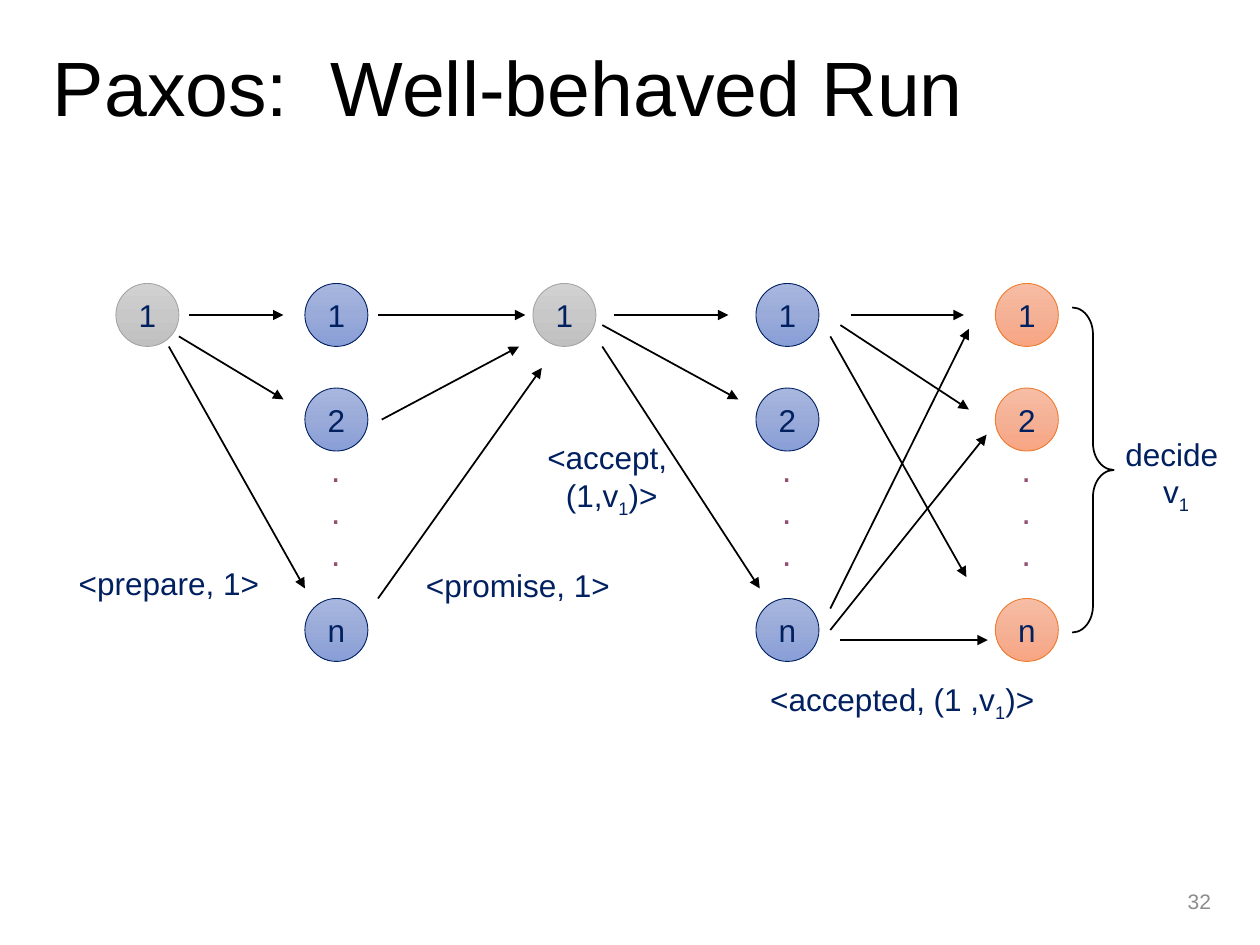
from dataclasses import dataclass

from lxml.etree import SubElement
from pptx import Presentation
from pptx.dml.color import RGBColor
from pptx.enum.shapes import MSO_CONNECTOR as Connector, MSO_SHAPE as Shape
from pptx.enum.text import MSO_ANCHOR as Anchor, MSO_AUTO_SIZE as AutoSize, PP_ALIGN as Align
from pptx.oxml.ns import qn
from pptx.util import Inches, Pt


@dataclass(frozen=True)
class Role:
    line: str
    gradient: tuple


@dataclass(frozen=True)
class Theme:
    font: str = "Arial"
    title_size: int = 44
    label_size: int = 18
    dots_size: int = 20
    number_size: int = 12
    black: str = "000000"
    label: str = "002060"
    dots: str = "954F72"
    number: str = "8C8C8C"
    proposer: Role = Role("A5A5A5", ("D2D2D2", "C8C8C8", "C0C0C0"))
    acceptor: Role = Role("002060", ("A8B7DF", "9AABD9", "889ED7"))
    learner: Role = Role("ED7D31", ("F7BDA5", "F5B196", "F8A582"))


@dataclass(frozen=True)
class Box:
    left: float
    top: float
    width: float
    height: float

    def inner(self, x, y, width, height):
        return Box(self.left + x, self.top + y, width, height)

    def lengths(self):
        return [Inches(v) for v in (self.left, self.top, self.width, self.height)]


THEME = Theme()
NODE = 0.5
NODE_ROWS = {"1": 0, "2": 0.83, "n": 2.5}


def write(shape, *paragraphs, size=THEME.label_size, color=THEME.label,
          align=Align.CENTER, anchor=Anchor.TOP, wrap=False, spacing=None):
    """Each paragraph is a tuple of parts; every second part is a subscript."""
    frame = shape.text_frame
    frame.auto_size = AutoSize.NONE
    frame.word_wrap = wrap
    frame.vertical_anchor = anchor
    for index, parts in enumerate(paragraphs):
        paragraph = frame.add_paragraph() if index else frame.paragraphs[0]
        paragraph.alignment = align
        if spacing:
            paragraph.line_spacing = spacing
        for position, part in enumerate(parts):
            run = paragraph.add_run()
            run.text = part
            run.font.name = THEME.font
            run.font.size = Pt(size)
            run.font.color.rgb = RGBColor.from_string(color)
            if position % 2:
                run.font._element.set("baseline", "-25000")


def label(shapes, box, *paragraphs, **style):
    write(shapes.add_textbox(*box.lengths()), *paragraphs, **style)


def outline(shape, color, width):
    shape.line.color.rgb = RGBColor.from_string(color)
    shape.line.width = Pt(width)


def shade(shape, colors):
    """Fill from top to bottom with evenly spaced colours."""
    shape.fill.gradient()
    shape.fill.gradient_angle = 270
    stops = shape._element.spPr.find(qn("a:gradFill")).find(qn("a:gsLst"))
    for stop in list(stops):
        stops.remove(stop)
    for index, color in enumerate(colors):
        position = index * 100000 // (len(colors) - 1)
        stop = SubElement(stops, qn("a:gs"), pos=str(position))
        SubElement(stop, qn("a:srgbClr"), val=color)


def node(shapes, box, name, role):
    circle = shapes.add_shape(Shape.OVAL, *box.lengths())
    circle.shadow.inherit = False
    shade(circle, role.gradient)
    outline(circle, role.line, 0.5)
    write(circle, (name,), anchor=Anchor.MIDDLE)


def column(shapes, box, role):
    """A lone proposer, or a full column of replicas with dots before n."""
    names = ["1"] if role is THEME.proposer else list(NODE_ROWS)
    for name in names:
        node(shapes, box.inner(0, NODE_ROWS[name], NODE, NODE), name, role)
    if len(names) > 1:
        label(shapes, box.inner(0.08, 1.25, 0.33, 1.1), *[(".",)] * 3,
              size=THEME.dots_size, color=THEME.dots, wrap=True)


def arrow(shapes, box, start, end):
    ends = [Inches(v) for x, y in (start, end) for v in (box.left + x, box.top + y)]
    line = shapes.add_connector(Connector.STRAIGHT, *ends)
    outline(line, THEME.black, 1)
    SubElement(line.line._get_or_add_ln(), qn("a:tailEnd"), type="triangle")
    SubElement(line._element.spPr, qn("a:effectLst"))


def phase(slide, box, messages, columns, caption_box, *caption):
    """One round of messages, the nodes it reaches and its caption."""
    shapes = slide.shapes.add_group_shape().shapes
    for start, end in messages:
        arrow(shapes, box, start, end)
    for x, role in columns:
        column(shapes, box.inner(x, 0, NODE, box.height), role)
    label(shapes, box.inner(*caption_box), *caption)


def decision(slide, box):
    shapes = slide.shapes.add_group_shape().shapes
    brace = shapes.add_shape(Shape.RIGHT_BRACE, *box.inner(0, 0, 0.33, box.height).lengths())
    brace.shadow.inherit = False
    brace.fill.background()
    brace.adjustments[0] = 0.646
    brace.adjustments[1] = 0.5
    outline(brace, THEME.black, 1)
    label(shapes, box.inner(0.04, 0.96, 1.57, 0.71), ("decide ",), ("v", "1"), wrap=True)


def heading(slide, box):
    title = slide.shapes.title
    title.left, title.top, title.width, title.height = box.lengths()
    write(title, ("Paxos:  Well-behaved Run",), size=THEME.title_size, color=THEME.black,
          align=Align.LEFT, anchor=Anchor.MIDDLE, wrap=True, spacing=0.9)


def page_number(slide, box):
    label(slide.shapes, box, ("32",), size=THEME.number_size, color=THEME.number,
          align=Align.RIGHT, anchor=Anchor.MIDDLE, wrap=True)


def main():
    deck = Presentation()
    deck.slide_width, deck.slide_height = Inches(10), Inches(7.5)
    slide = deck.slides.add_slide(deck.slide_layouts[5])

    heading(slide, Box(0.32, 0, 9.4, 1.45))
    page_number(slide, Box(7.46, 6.95, 2.25, 0.4))

    # Accepted: acceptors to learners
    phase(slide, Box(6.59, 2.25, 1.81, 3),
          [((0, 0.42), (1.08, 2.33)), ((0.08, 0.33), (1.1, 1)),
           ((0.16, 0.25), (1.06, 0.25)), ((0.08, 2.83), (1.25, 2.83)),
           ((0, 2.58), (1.1, 0.36)), ((0, 2.75), (1.24, 1.2))],
          [(1.31, THEME.learner)],
          (-0.62, 3.1, 2.38, 0.4), ("<accepted, (1 ,v", "1", ")>"))
    # Prepare: proposer to acceptors
    phase(slide, Box(0.92, 2.25, 2, 3),
          [((0.58, 0.25), (1.33, 0.25)), ((0.5, 0.42), (1.33, 0.92)),
           ((0.42, 0.5), (1.5, 2.42))],
          [(0, THEME.proposer), (1.5, THEME.acceptor)],
          (-0.42, 2.18, 1.68, 0.4), ("<prepare, 1>",))
    # Promise: acceptors back to the proposer
    phase(slide, Box(3, 2.25, 1.73, 3),
          [((0, 2.5), (1.3, 0.67)), ((0.03, 1.08), (1.12, 0.5)),
           ((0, 0.25), (1.17, 0.25))],
          [(1.23, THEME.proposer)],
          (0.25, 2.19, 1.72, 0.4), ("<promise, 1>",))
    # Accept: proposer to acceptors
    phase(slide, Box(4.78, 2.25, 1.72, 3),
          [((0.09, 0.25), (1, 0.25)), ((0, 0.33), (1.08, 0.92)),
           ((0, 0.5), (1.25, 2.42))],
          [(1.22, THEME.acceptor)],
          (-0.57, 1.18, 1.29, 0.71), ("<accept, ",), ("(1,v", "1", ")>"))
    decision(slide, Box(8.51, 2.44, 1.61, 2.58))

    deck.save("out.pptx")


if __name__ == "__main__":
    main()
